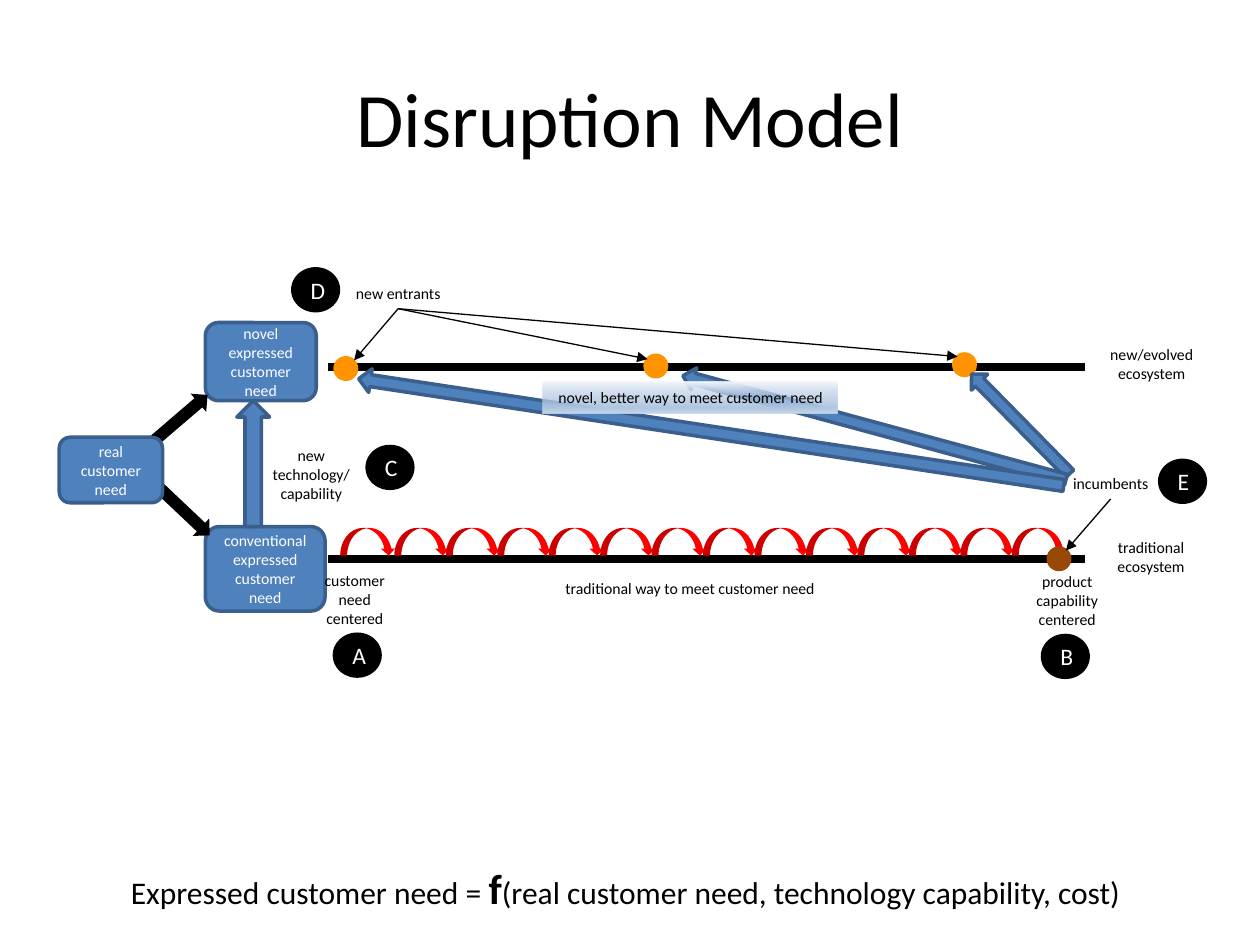
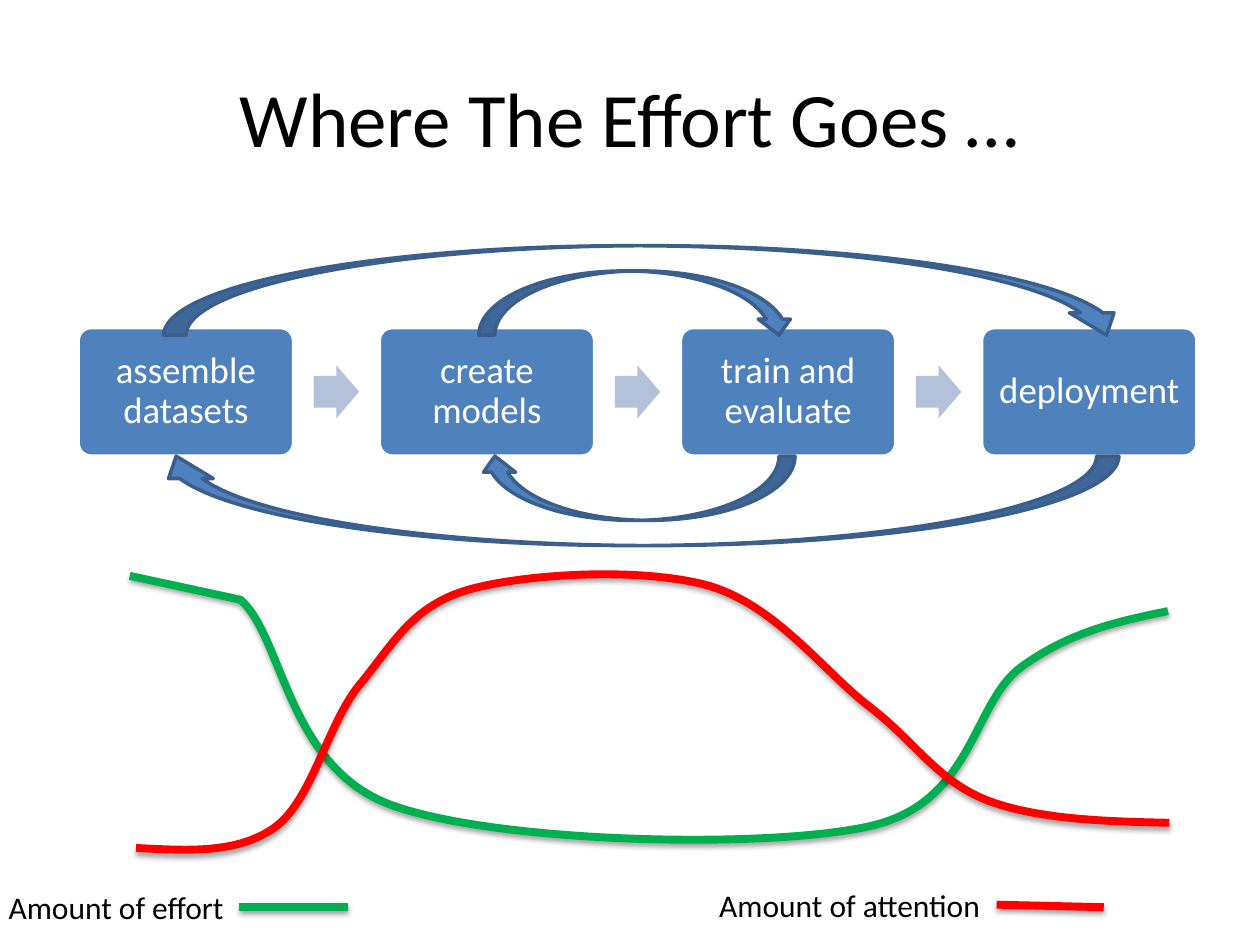
from dataclasses import dataclass
from typing import NamedTuple, Optional, Sequence, Union

from lxml import etree
from pptx import Presentation, slide as sl, util as u
from pptx.dml import color
from pptx.enum import shapes, text as tx
from pptx.oxml import ns
from pptx.shapes import autoshape, connector
from pptx.text import text as pt

Kind = shapes.MSO_SHAPE
Align = tx.PP_ALIGN
Anchor = tx.MSO_ANCHOR
BOTTOM, RIGHT = 2, 3


@dataclass(frozen=True)
class Theme:
    font: str = "Calibri"
    ink: str = "000000"
    paper: str = "FFFFFF"
    blue: str = "4F81BD"
    outline: str = "3A5F8C"
    pale: str = "B3C1DB"
    orange: str = "FF9300"
    brown: str = "984807"
    red: str = "FF0000"
    green: str = "00B050"
    title: float = 44
    function: float = 24
    step: float = 21
    body: float = 18
    badge: float = 13.5
    label: float = 9
    edge: float = 2
    thin: float = 0.75
    thick: float = 4.5


THEME = Theme()


class Box(NamedTuple):
    left: float
    top: float
    width: float
    height: float


class Point(NamedTuple):
    x: float
    y: float


class Run(NamedTuple):
    text: str
    size: float
    bold: bool = False


class Label(NamedTuple):
    text: str
    box: Box


class Arrow(NamedTuple):
    kind: Kind
    box: Box
    turn: float = 0


class Curve(NamedTuple):
    name: str
    name_box: Box
    key_end: Point
    hue: str
    box: Box
    start: Point
    segments: Sequence[Sequence[tuple[float, float]]]


def rgb(code: str) -> color.RGBColor:
    return color.RGBColor.from_string(code)


def inches(values: Sequence[float]) -> list[u.Length]:
    return [u.Inches(value) for value in values]


def write(frame: pt.TextFrame, content: Union[str, Sequence[Run]], *,
          size: float = THEME.label, hue: str = THEME.ink, align: Align = Align.CENTER,
          anchor: Anchor = Anchor.TOP, wrap: bool = True, grow: bool = False,
          inset: Optional[float] = None, spacing: Optional[float] = None) -> None:
    frame.word_wrap = wrap
    frame.vertical_anchor = anchor
    if grow:
        frame.auto_size = tx.MSO_AUTO_SIZE.SHAPE_TO_FIT_TEXT
    if inset is not None:
        frame.margin_left = frame.margin_right = u.Inches(inset)
        frame.margin_top = frame.margin_bottom = u.Inches(inset)
    if isinstance(content, str):
        frame.text = content
        styles = None
    else:
        styles = content
        for part in content:
            frame.paragraphs[0].add_run().text = part.text
    for paragraph in frame.paragraphs:
        paragraph.alignment = align
        if spacing:
            paragraph.line_spacing = spacing
        for line_break in paragraph._p.findall(ns.qn("a:br")):
            etree.SubElement(line_break, ns.qn("a:rPr"), sz=str(int(size * 100)))
        for index, run in enumerate(paragraph.runs):
            run.font.name = THEME.font
            run.font.size = u.Pt(styles[index].size if styles else size)
            run.font.bold = styles[index].bold if styles else False
            run.font.color.rgb = rgb(hue)


def add_label(slide: sl.Slide, label: Label, *, size: float = THEME.label,
              align: Align = Align.CENTER) -> autoshape.Shape:
    area = slide.shapes.add_textbox(*inches(label.box))
    write(area.text_frame, label.text, size=size, align=align, wrap=False, grow=True)
    return area


def add_title(slide: sl.Slide, content: str) -> None:
    area = slide.shapes.add_textbox(*inches(Box(0.5, 0.3, 9, 1.25)))
    write(area.text_frame, content, size=THEME.title, anchor=Anchor.MIDDLE)


def add_figure(slide: sl.Slide, kind: Kind, box: Box, *, fill: str = THEME.blue,
               edge: Optional[str] = None, turn: float = 0,
               adjust: Sequence[float] = ()) -> autoshape.Shape:
    figure = slide.shapes.add_shape(kind, *inches(box))
    figure.shadow.inherit = False
    figure.rotation = turn
    figure.fill.solid()
    figure.fill.fore_color.rgb = rgb(fill)
    if edge:
        figure.line.color.rgb = rgb(edge)
        figure.line.width = u.Pt(THEME.edge)
    else:
        figure.line.fill.background()
    for index, value in enumerate(adjust):
        figure.adjustments[index] = value
    return figure


def add_arrow(slide: sl.Slide, arrow: Arrow) -> None:
    add_figure(slide, arrow.kind, arrow.box, edge=THEME.outline, turn=arrow.turn)


def add_need(slide: sl.Slide, need: Label) -> None:
    figure = add_figure(slide, Kind.ROUNDED_RECTANGLE, need.box, edge=THEME.outline)
    write(figure.text_frame, need.text, hue=THEME.paper, anchor=Anchor.MIDDLE)


def add_line(slide: sl.Slide, start: Point, end: Point, *, hue: str = THEME.ink,
             width: float = THEME.thick, head: bool = False,
             source: Optional[autoshape.Shape] = None, side: int = BOTTOM) -> connector.Connector:
    line = slide.shapes.add_connector(shapes.MSO_CONNECTOR.STRAIGHT, *inches(start + end))
    if source is not None:
        line.begin_connect(source, side)
    line.line.color.rgb = rgb(hue)
    line.line.width = u.Pt(width)
    if head:
        etree.SubElement(line.line._get_or_add_ln(), ns.qn("a:tailEnd"), type="triangle")
    etree.SubElement(line._element.spPr, ns.qn("a:effectLst"))
    return line


def cast_shadow(figure: Union[autoshape.Shape, connector.Connector], opacity: int,
                distance: float) -> None:
    effects = figure._element.spPr.find(ns.qn("a:effectLst"))
    shadow = etree.SubElement(effects, ns.qn("a:outerShdw"), blurRad=str(u.Pt(3.1)),
                              dist=str(u.Pt(distance)), dir="5400000", rotWithShape="0")
    tint = etree.SubElement(shadow, ns.qn("a:srgbClr"), val=THEME.ink)
    etree.SubElement(tint, ns.qn("a:alpha"), val=str(opacity * 1000))


def fade(figure: autoshape.Shape, stops: Sequence[tuple[int, str, int]]) -> None:
    figure.fill.gradient()
    figure.fill.gradient_angle = 270
    stop_list = figure._element.spPr.find(".//" + ns.qn("a:gsLst"))
    for stop in list(stop_list):
        stop_list.remove(stop)
    for position, hue, opacity in stops:
        stop = etree.SubElement(stop_list, ns.qn("a:gs"), pos=str(position * 1000))
        tint = etree.SubElement(stop, ns.qn("a:srgbClr"), val=hue)
        if opacity < 100:
            etree.SubElement(tint, ns.qn("a:alpha"), val=str(opacity * 1000))


def bend(figure: autoshape.Shape, curve: Curve) -> None:
    figure.left, figure.top, figure.width, figure.height = inches(curve.box)
    outline = figure._element.spPr.find(".//" + ns.qn("a:path"))
    for step in list(outline):
        outline.remove(step)
    outline.set("w", str(figure.width))
    outline.set("h", str(figure.height))
    steps = [("a:moveTo", [curve.start])]
    steps += [("a:lnTo" if len(part) == 1 else "a:cubicBezTo", part) for part in curve.segments]
    for tag, points in steps:
        step = etree.SubElement(outline, ns.qn(tag))
        for x, y in points:
            etree.SubElement(step, ns.qn("a:pt"), x=str(u.Inches(x) - figure.left),
                             y=str(u.Inches(y) - figure.top))


def add_curve(slide: sl.Slide, curve: Curve) -> None:
    name = add_label(slide, Label(curve.name, curve.name_box), size=THEME.body, align=Align.LEFT)
    builder = slide.shapes.build_freeform(*inches(curve.start))
    builder.add_line_segments([inches(part[-1]) for part in curve.segments], close=False)
    trend = builder.convert_to_shape()
    bend(trend, curve)
    trend.shadow.inherit = False
    trend.fill.background()
    trend.line.color.rgb = rgb(curve.hue)
    trend.line.width = u.Pt(THEME.thick)
    cast_shadow(trend, 35, 1.8)
    box = curve.name_box
    key = add_line(slide, Point(box.left + box.width, box.top + box.height / 2), curve.key_end,
                   hue=curve.hue, source=name, side=RIGHT)
    cast_shadow(key, 38, 1.6)


def build_disruption(slide: sl.Slide) -> None:
    add_need(slide, Label("conventional expressed customer need", Box(1.63, 4.18, 0.95, 0.67)))
    add_need(slide, Label("novel\nexpressed customer need", Box(1.63, 2.56, 0.88, 0.62)))
    add_arrow(slide, Arrow(Kind.UP_ARROW, Box(1.88, 3.18, 0.26, 1)))
    for left, top, turn in ((1, 3.89, 43.4), (0.97, 3.29, 319.4)):
        add_figure(slide, Kind.RIGHT_ARROW, Box(left, top, 0.77, 0.19), fill=THEME.ink, turn=turn)
    add_need(slide, Label("real customer need", Box(0.47, 3.47, 0.82, 0.52)))

    for level in (4.44, 2.91):
        add_line(slide, Point(2.6, level), Point(8.61, level))
    for label in (
        Label("new\vtechnology/\vcapability", Box(2.06, 3.49, 0.82, 0.56)),
        Label("traditional\vecosystem", Box(8.76, 4.22, 0.75, 0.4)),
        Label("customer\vneed\vcentered", Box(2.47, 4.48, 0.69, 0.56)),
        Label("product\vcapability\vcentered", Box(8.12, 4.49, 0.7, 0.56)),
        Label("new/evolved\vecosystem", Box(8.7, 2.69, 0.88, 0.4)),
        Label("traditional way to meet customer need", Box(4.37, 4.54, 2.21, 0.25)),
    ):
        add_label(slide, label)

    for left in (2.7, *(3.13 + hop * 4.9 / 12 for hop in range(13))):
        add_figure(slide, Kind.CURVED_DOWN_ARROW, Box(left, 4.19, 0.44, 0.22), fill=THEME.red)

    for left, top, hue in ((8.32, 4.35, THEME.brown), (2.66, 2.84, THEME.orange),
                           (5.12, 2.82, THEME.orange), (7.57, 2.81, THEME.orange)):
        add_figure(slide, Kind.OVAL, Box(left, top, 0.17, 0.17), fill=hue, edge=hue)
    incumbents = add_label(slide, Label("incumbents", Box(8.41, 3.71, 0.81, 0.25)))
    entrants = add_label(slide, Label("new entrants", Box(2.72, 2.2, 0.88, 0.25)))
    for source, start, end in (
        (incumbents, Point(8.82, 3.96), Point(8.46, 4.37)),
        (entrants, Point(3.16, 2.45), Point(2.81, 2.86)),
        (entrants, Point(3.16, 2.45), Point(5.14, 2.85)),
        (entrants, Point(3.16, 2.45), Point(7.6, 2.83)),
    ):
        add_line(slide, start, end, width=THEME.thin, head=True, source=source)

    for box, turn in ((Box(8.01, 2.81, 0.18, 1.11), 315.5), (Box(6.85, 1.82, 0.18, 3.15), 285.2),
                      (Box(5.55, 0.6, 0.19, 5.66), 278.6)):
        add_arrow(slide, Arrow(Kind.UP_ARROW, box, turn))
    better_way = add_figure(slide, Kind.RECTANGLE, Box(4.31, 3.03, 2.34, 0.25))
    fade(better_way, ((0, "F6F9FC", 100), (50, "B0C6E1", 70),
                      (83, "B0C6E1", 100), (100, "CAD9EB", 100)))
    write(better_way.text_frame, "novel, better way to meet customer need", wrap=False, grow=True)

    for letter, left, top in (("A", 2.64, 5.02), ("B", 8.26, 5.03), ("C", 2.9, 3.53),
                              ("D", 2.31, 2.12), ("E", 9.19, 3.64)):
        badge = add_figure(slide, Kind.OVAL, Box(left, top, 0.39, 0.36), fill=THEME.ink)
        write(badge.text_frame, letter, size=THEME.badge, hue=THEME.paper, anchor=Anchor.MIDDLE)

    formula = slide.shapes.add_textbox(*inches(Box(0.94, 6.8, 8.15, 0.5)))
    write(formula.text_frame, (Run("Expressed customer need = ", THEME.body),
                               Run("f", THEME.function, True),
                               Run("(real customer need, technology capability, cost)", THEME.body)),
          align=Align.LEFT, wrap=False, grow=True)


def build_effort(slide: sl.Slide) -> None:
    steps = ("assemble datasets", "create models", "train and evaluate", "deployment")
    for index, step in enumerate(steps):
        left = 0.62 + index * 2.39
        figure = add_figure(slide, Kind.ROUNDED_RECTANGLE, Box(left, 2.6, 1.71, 1.02),
                            edge=THEME.paper, adjust=(0.1,))
        write(figure.text_frame, step, size=THEME.step, hue=THEME.paper, anchor=Anchor.MIDDLE,
              inset=0.09, spacing=0.9)
        if index < len(steps) - 1:
            add_figure(slide, Kind.RIGHT_ARROW, Box(left + 1.87, 2.9, 0.36, 0.42),
                       fill=THEME.pale, adjust=(0.6, 0.5))
    for box, turn in ((Box(3.8, 2.15, 2.51, 0.51), 0), (Box(3.8, 3.62, 2.51, 0.51), 180),
                      (Box(1.3, 1.95, 7.66, 0.71), 0), (Box(1.22, 3.62, 7.66, 0.71), 180)):
        add_arrow(slide, Arrow(Kind.CURVED_DOWN_ARROW, box, turn))

    add_curve(slide, Curve(
        "Amount of effort", Box(-0.03, 7, 1.93, 0.4), Point(2.76, 7.2), THEME.green,
        Box(1.03, 4.57, 8.24, 2.09), Point(1.03, 4.57),
        (((1.91, 4.76),), ((2.25, 5.06), (2.28, 6.09), (3.11, 6.39)),
         ((3.94, 6.69), (6.06, 6.74), (6.89, 6.56)), ((7.73, 6.38), (7.71, 5.58), (8.11, 5.29)),
         ((8.5, 5.01), (8.88, 4.93), (9.27, 4.85)))))
    add_curve(slide, Curve(
        "Amount of attention", Box(5.61, 6.98, 2.3, 0.4), Point(8.76, 7.2), THEME.red,
        Box(1.08, 4.56, 8.2, 2.19), Point(1.08, 6.73),
        (((1.49, 6.75), (1.89, 6.78), (2.19, 6.56)), ((2.48, 6.34), (2.6, 5.75), (2.85, 5.44)),
         ((3.11, 5.13), (3.26, 4.81), (3.72, 4.68)), ((4.18, 4.55), (5.1, 4.5), (5.63, 4.65)),
         ((6.16, 4.81), (6.53, 5.32), (6.89, 5.6)), ((7.26, 5.88), (7.43, 6.19), (7.83, 6.35)),
         ((8.22, 6.5), (8.75, 6.52), (9.28, 6.53)))))


def main() -> None:
    deck = Presentation()
    deck.slide_width, deck.slide_height = inches((10, 7.5))
    for title, build in (("Disruption Model", build_disruption),
                         ("Where The Effort Goes …", build_effort)):
        slide = deck.slides.add_slide(deck.slide_layouts[6])
        add_title(slide, title)
        build(slide)
    deck.save("out.pptx")


if __name__ == "__main__":
    main()
